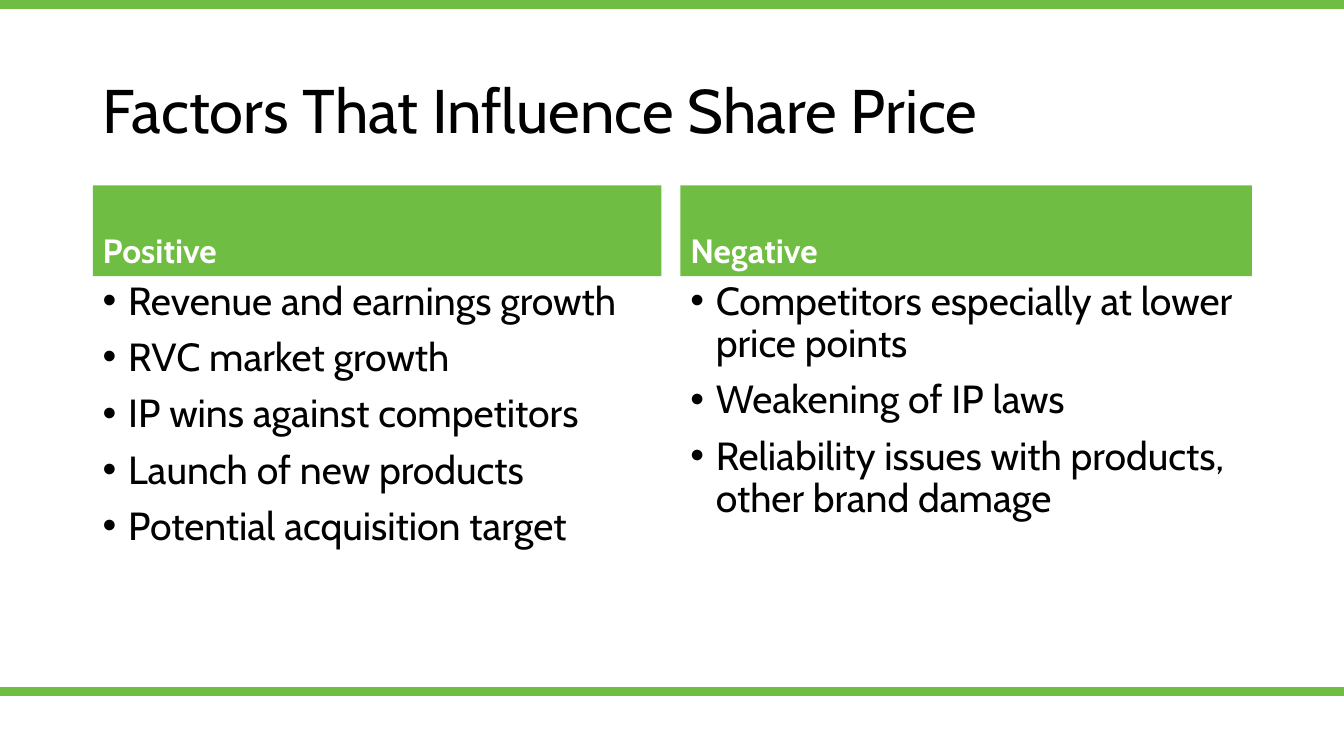
from pptx import Presentation
from pptx.dml.color import RGBColor
from pptx.enum.shapes import MSO_CONNECTOR, MSO_SHAPE
from pptx.enum.text import MSO_ANCHOR, MSO_AUTO_SIZE, PP_ALIGN
from pptx.oxml.ns import qn
from pptx.util import Cm, Pt
from lxml import etree

STRAIGHT, RECTANGLE = MSO_CONNECTOR.STRAIGHT, MSO_SHAPE.RECTANGLE
TOP, MIDDLE, BOTTOM = MSO_ANCHOR.TOP, MSO_ANCHOR.MIDDLE, MSO_ANCHOR.BOTTOM
LEFT, NO_FIT = PP_ALIGN.LEFT, MSO_AUTO_SIZE.NONE

GREEN = RGBColor(0x6F, 0xBE, 0x43)
BLACK = RGBColor(0, 0, 0)
WHITE = RGBColor(0xFF, 0xFF, 0xFF)

# Content
HEADLINE = "Factors That Influence Share Price"
FACTORS = [
    ("Positive", [
        "Revenue and earnings growth",
        "RVC market growth",
        "IP wins against competitors",
        "Launch of new products",
        "Potential acquisition target",
    ]),
    ("Negative", [
        "Competitors especially at lower price points",
        "Weakening of IP laws",
        "Reliability issues with products, other brand damage",
    ]),
]

# Layout
SLIDE_WIDTH, SLIDE_HEIGHT = Cm(33.87), Cm(19.05)
RULE_HEIGHTS = [Cm(17.42), Cm(0.11)]
MARGIN, CONTENT_WIDTH = Cm(2.34), Cm(29.21)
TITLE_TOP, TITLE_HEIGHT = Cm(1.02), Cm(3.68)
COLUMN_WIDTHS, COLUMN_GAP = [Cm(14.33), Cm(14.4)], Cm(0.48)
BAND_TOP, BAND_HEIGHT, LIST_HEIGHT = Cm(4.67), Cm(2.29), Cm(10.24)
INDENT = Cm(0.64)

# Text formats
TITLE_FONT = {"name": "Cabin", "size": Pt(44), "bold": False}
BAND_FONT = {"name": "Cabin", "size": Pt(24), "bold": True}
LIST_FONT = {"name": "Cabin", "size": Pt(28), "bold": False}


def write(box, lines, font, color, anchor, bulleted=False):
    frame = box.text_frame
    frame.text = "\n".join(lines)
    frame.word_wrap = True
    frame.auto_size = NO_FIT
    frame.vertical_anchor = anchor
    for number, paragraph in enumerate(frame.paragraphs):
        if bulleted:
            properties = paragraph._p.get_or_add_pPr()
            properties.set("marL", str(INDENT))
            properties.set("indent", str(-INDENT))
            etree.SubElement(properties, qn("a:buFont"), typeface="Arial")
            etree.SubElement(properties, qn("a:buChar"), char="•")
        paragraph.alignment = LEFT
        paragraph.line_spacing = 0.9
        paragraph.space_before = Pt(10 if number else 0)
        for key, value in font.items():
            setattr(paragraph.font, key, value)
        paragraph.font.color.rgb = color


def main():
    deck = Presentation()
    deck.slide_width, deck.slide_height = SLIDE_WIDTH, SLIDE_HEIGHT
    slide = deck.slides.add_slide(deck.slide_layouts[5])
    shapes = slide.shapes

    # Green rules across the slide
    for height in RULE_HEIGHTS:
        rule = shapes.add_connector(STRAIGHT, 0, height, SLIDE_WIDTH, height)
        rule.line.color.rgb = GREEN
        rule.line.width = Pt(6)
        etree.SubElement(rule._element.spPr, qn("a:effectLst"))

    # Title
    title = shapes.title
    title.left, title.top = MARGIN, TITLE_TOP
    title.width, title.height = CONTENT_WIDTH, TITLE_HEIGHT
    write(title, [HEADLINE], TITLE_FONT, BLACK, MIDDLE)

    # One heading band and one list per column
    left = MARGIN
    for (heading, points), width in zip(FACTORS, COLUMN_WIDTHS):
        band = shapes.add_shape(RECTANGLE, left, BAND_TOP, width, BAND_HEIGHT)
        band.shadow.inherit = False
        band.fill.solid()
        band.fill.fore_color.rgb = GREEN
        band.line.fill.background()
        write(band, [heading], BAND_FONT, WHITE, BOTTOM)

        factors = shapes.add_textbox(left, BAND_TOP + BAND_HEIGHT, width, LIST_HEIGHT)
        write(factors, points, LIST_FONT, BLACK, TOP, bulleted=True)
        left += width + COLUMN_GAP

    deck.save("out.pptx")


if __name__ == "__main__":
    main()
